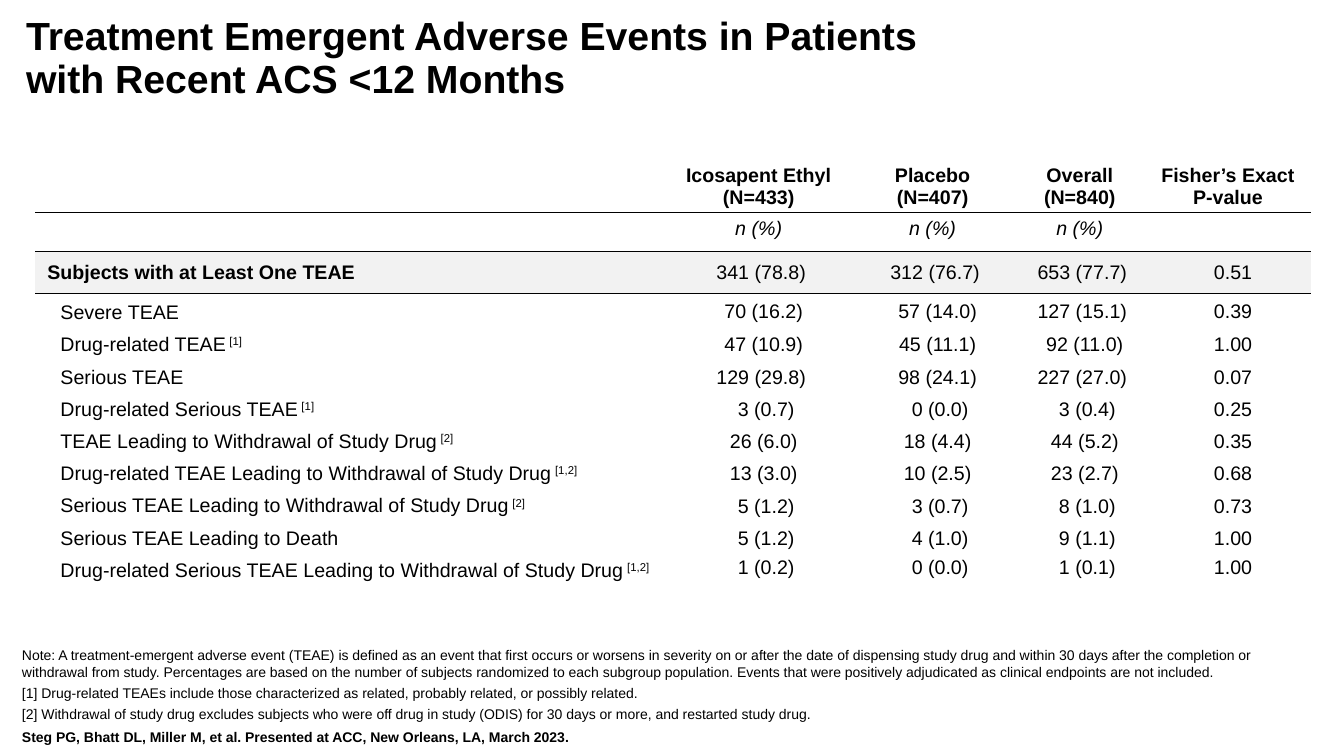
from dataclasses import dataclass

from lxml.etree import SubElement
from pptx import Presentation
from pptx.dml.color import RGBColor
from pptx.enum.text import MSO_ANCHOR, PP_ALIGN
from pptx.oxml.ns import qn
from pptx.util import Inches, Pt


@dataclass(frozen=True)
class Theme:
    font: str = "Arial"
    ink: str = "000000"
    band: str = "F2F2F2"
    title: int = 28
    body: int = 14
    note: int = 10
    rule: float = 1


THEME = Theme()
PLAIN_STYLE = "{2D5ABB26-0587-4C30-8999-92F81FD0307C}"
COLUMNS = [6.26, 1.83, 1.62, 1.3, 1.64]
ROWS = [0.53, 0.37, 0.42, 0.34] + [0.32] * 7 + [0.52]
SPACE_WIDTH = 0.05
HEADINGS = [
    "Icosapent Ethyl\n(N=433)",
    "Placebo\n(N=407)",
    "Overall\n(N=840)",
    "Fisher’s Exact\nP-value",
]
EVENTS = [
    ("Subjects with at Least One TEAE", "", "341 (78.8)", "312 (76.7)", "653 (77.7)", "0.51"),
    ("Severe TEAE", "", "70 (16.2)", "57 (14.0)", "127 (15.1)", "0.39"),
    ("Drug-related TEAE", "[1]", "47 (10.9)", "45 (11.1)", "92 (11.0)", "1.00"),
    ("Serious TEAE", "", "129 (29.8)", "98 (24.1)", "227 (27.0)", "0.07"),
    ("Drug-related Serious TEAE", "[1]", "3 (0.7)", "0 (0.0)", "3 (0.4)", "0.25"),
    ("TEAE Leading to Withdrawal of Study Drug", "[2]",
     "26 (6.0)", "18 (4.4)", "44 (5.2)", "0.35"),
    ("Drug-related TEAE Leading to Withdrawal of Study Drug", "[1,2]",
     "13 (3.0)", "10 (2.5)", "23 (2.7)", "0.68"),
    ("Serious TEAE Leading to Withdrawal of Study Drug", "[2]",
     "5 (1.2)", "3 (0.7)", "8 (1.0)", "0.73"),
    ("Serious TEAE Leading to Death", "", "5 (1.2)", "4 (1.0)", "9 (1.1)", "1.00"),
    ("Drug-related Serious TEAE Leading to Withdrawal of Study Drug", "[1,2]",
     "1 (0.2)", "0 (0.0)", "1 (0.1)", "1.00"),
]
NOTES = [
    "Note: A treatment-emergent adverse event (TEAE) is defined as an event that first occurs "
    "or worsens in severity on or after the date of dispensing study drug and within 30 days "
    "after the completion or withdrawal from study. Percentages are based on the number of "
    "subjects randomized to each subgroup population. Events that were positively adjudicated "
    "as clinical endpoints are not included.",
    "[1] Drug-related TEAEs include those characterized as related, probably related, "
    "or possibly related.",
    "[2] Withdrawal of study drug excludes subjects who were off drug in study (ODIS) "
    "for 30 days or more, and restarted study drug.",
]
CITATION = "Steg PG, Bhatt DL, Miller M, et al. Presented at ACC, New Orleans, LA, March 2023."


def add_text(para, text, size=THEME.body, bold=False, italic=False, raised=False):
    for index, line in enumerate(text.split("\n")):
        if index:
            para.add_line_break()
        span = para.add_run()
        span.text = line
        span.font.name = THEME.font
        span.font.size = Pt(size)
        span.font.bold = bold
        span.font.italic = italic
        span.font.color.rgb = RGBColor.from_string(THEME.ink)
        if raised:
            span.font._element.set("baseline", "30000")


def add_box(page, left, top, width, height, anchor):
    box = page.shapes.add_textbox(Inches(left), Inches(top), Inches(width), Inches(height))
    box.text_frame.word_wrap = True
    box.text_frame.vertical_anchor = anchor
    return box.text_frame


def set_margins(cell, left, top, right, bottom):
    cell.margin_left, cell.margin_top = Inches(left), Inches(top)
    cell.margin_right, cell.margin_bottom = Inches(right), Inches(bottom)


def add_rule(cell, side):
    line = SubElement(cell._tc.get_or_add_tcPr(), qn(f"a:{side}"), w=str(Pt(THEME.rule)))
    fill = SubElement(line, qn("a:solidFill"))
    SubElement(fill, qn("a:srgbClr"), val=THEME.ink)


def fill_heading(cell, text, italic=False):
    set_margins(cell, 0.1, 0.05, 0.1, 0.03)
    para = cell.text_frame.paragraphs[0]
    para.alignment = PP_ALIGN.CENTER
    if text:
        add_text(para, text, bold=not italic, italic=italic)


def fill_label(cell, label, mark, left, top, bottom, bold):
    set_margins(cell, left, top, 0.1, bottom)
    para = cell.text_frame.paragraphs[0]
    add_text(para, label, bold=bold)
    if mark:
        add_text(para, f" {mark}", raised=True)


def fill_value(cell, value, bottom):
    count = value.split(" (")[0]
    indent = 2 if "." in count else 4 - len(count)
    set_margins(cell, indent * SPACE_WIDTH, 0, 0, bottom)
    cell.vertical_anchor = MSO_ANCHOR.MIDDLE
    para = cell.text_frame.paragraphs[0]
    para.alignment = PP_ALIGN.CENTER
    add_text(para, value)


def add_event_table(page):
    frame = page.shapes.add_table(
        len(ROWS), len(COLUMNS), Inches(0.35), Inches(1.58),
        Inches(sum(COLUMNS)), Inches(sum(ROWS)))
    table = frame.table
    table.first_row = table.horz_banding = False
    table._tbl.tblPr.find(qn("a:tableStyleId")).text = PLAIN_STYLE
    for column, width in zip(table.columns, COLUMNS):
        column.width = Inches(width)
    for row, height in zip(table.rows, ROWS):
        row.height = Inches(height)

    for column, heading in enumerate([""] + HEADINGS):
        fill_heading(table.cell(0, column), heading)
        unit = "n (%)" if column in (1, 2, 3) else ""
        fill_heading(table.cell(1, column), unit, italic=True)
        for row, side in ((0, "lnB"), (1, "lnT"), (1, "lnB"), (2, "lnT")):
            add_rule(table.cell(row, column), side)

    for index, (label, mark, *values) in enumerate(EVENTS):
        row = index + 2
        summary, last = index == 0, index == len(EVENTS) - 1
        top = {0: 0.1, 1: 0.08}.get(index, 0.05)
        fill_label(table.cell(row, 0), label, mark, 0.12 if summary else 0.25, top,
                   0.25 if last else 0.05, summary)
        for column, value in enumerate(values, 1):
            fill_value(table.cell(row, column), value, 0.25 if last else 0)
        for cell in table.rows[row].cells:
            if summary:
                cell.fill.solid()
                cell.fill.fore_color.rgb = RGBColor.from_string(THEME.band)
            else:
                cell.fill.background()


def add_title(page):
    para = add_box(page, 0.16, 0.12, 12.83, 0.95, MSO_ANCHOR.TOP).paragraphs[0]
    para.line_spacing = 0.9
    add_text(para, "Treatment Emergent Adverse Events in Patients\nwith Recent ACS <12 Months",
             size=THEME.title, bold=True)


def add_notes(page):
    frame = add_box(page, 0.12, 6.36, 12.87, 1.08, MSO_ANCHOR.BOTTOM)
    for index, text in enumerate(NOTES + [CITATION]):
        para = frame.add_paragraph() if index else frame.paragraphs[0]
        citation = text == CITATION
        para.space_before = Pt(4 if citation else 3)
        add_text(para, text, size=THEME.note, bold=citation)


def main():
    deck = Presentation()
    deck.slide_width, deck.slide_height = Inches(13.33), Inches(7.5)
    page = deck.slides.add_slide(deck.slide_layouts[6])
    add_event_table(page)
    add_title(page)
    add_notes(page)
    deck.save("out.pptx")


if __name__ == "__main__":
    main()
